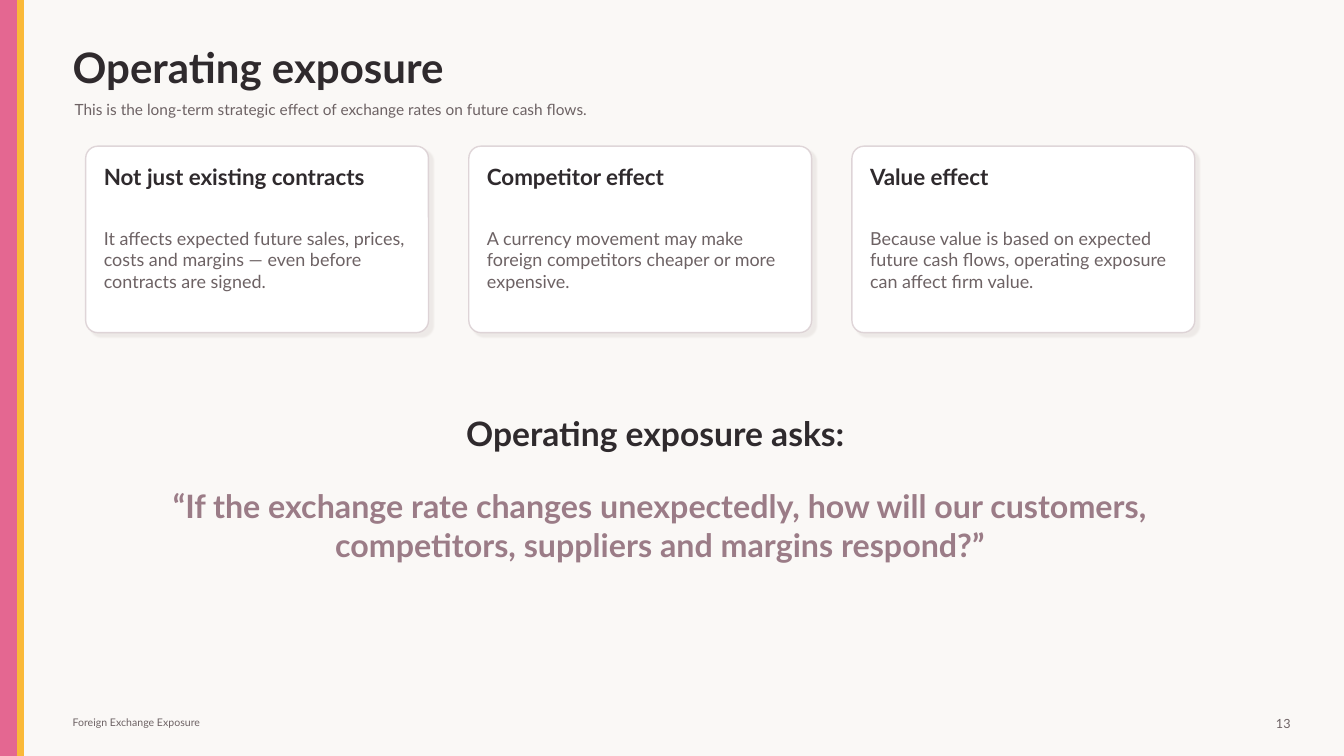
import pptx
import pptx.util
import pptx.dml.color
import pptx.enum.shapes
import pptx.enum.text
import pptx.oxml
import pptx.oxml.ns
import lxml.etree

Inches = pptx.util.Inches
RGBColor = pptx.dml.color.RGBColor
SHAPE = pptx.enum.shapes.MSO_SHAPE
ALIGN = pptx.enum.text.PP_ALIGN

PAPER = RGBColor(0xFA, 0xF8, 0xF6)
PINK = RGBColor(0xE4, 0x67, 0x91)
AMBER = RGBColor(0xFA, 0xB9, 0x38)
INK = RGBColor(0x2F, 0x2A, 0x2D)
GREY = RGBColor(0x6D, 0x62, 0x64)
MAUVE = RGBColor(0x9B, 0x7C, 0x87)
WHITE = RGBColor(0xFF, 0xFF, 0xFF)
BORDER = RGBColor(0xD8, 0xCC, 0xD0)
SHADOW = RGBColor(0xB8, 0xAD, 0xA8)

deck = pptx.Presentation()
deck.slide_width = Inches(13.33)
deck.slide_height = Inches(7.5)
page = deck.slides.add_slide(deck.slide_layouts[5])
page.background.fill.solid()
page.background.fill.fore_color.rgb = PAPER


def write(box, text, size, colour, bold=False, align=ALIGN.LEFT):
    frame = box.text_frame
    frame.word_wrap = True
    frame.auto_size = pptx.enum.text.MSO_AUTO_SIZE.NONE
    frame.vertical_anchor = pptx.enum.text.MSO_ANCHOR.MIDDLE
    frame.margin_left = frame.margin_top = frame.margin_right = frame.margin_bottom = 0
    para = frame.paragraphs[0]
    para.text = text
    para.alignment = align
    para.font.name = "Lato"
    para.font.size = pptx.util.Pt(size)
    para.font.bold = bold
    para.font.color.rgb = colour


def add_panel(kind, left, top, width, height, fill, line):
    panel = page.shapes.add_shape(kind, Inches(left), Inches(top), Inches(width), Inches(height))
    panel.shadow.inherit = False
    panel.fill.solid()
    panel.fill.fore_color.rgb = fill
    panel.line.color.rgb = line
    panel.line.width = pptx.util.Pt(1)
    return panel


# Colour bands on the left edge
for left, width, colour in [(0, 0.18, PINK), (0.18, 0.05, AMBER)]:
    add_panel(SHAPE.RECTANGLE, left, 0, width, 7.5, colour, colour)

# Title
title = page.shapes.title
title.left, title.top = Inches(0.72), Inches(0.42)
title.width, title.height = Inches(11.9), Inches(0.48)
write(title, "Operating exposure", 30, INK, True)

# Cards: outline with a soft shadow, then heading and body text
labels = []
cards = [
    ("Not just existing contracts",
     "It affects expected future sales, prices, costs and margins — even before contracts are signed."),
    ("Competitor effect",
     "A currency movement may make foreign competitors cheaper or more expensive."),
    ("Value effect",
     "Because value is based on expected future cash flows, operating exposure can affect firm value."),
]
for index, (heading, body) in enumerate(cards):
    left = 0.85 + 3.8 * index
    card = add_panel(SHAPE.ROUNDED_RECTANGLE, left, 1.45, 3.4, 1.85, WHITE, BORDER)
    card.adjustments[0] = 0.065
    line_colour = card.line._ln.find(".//" + pptx.oxml.ns.qn("a:srgbClr"))
    lxml.etree.SubElement(line_colour, pptx.oxml.ns.qn("a:alpha"), val="80000")
    effects = card.element.spPr.find(pptx.oxml.ns.qn("a:effectLst"))
    effects.append(pptx.oxml.parse_xml(
        f'<a:outerShdw {pptx.oxml.ns.nsdecls("a")} blurRad="12700" dist="50800" dir="2700000" '
        f'algn="tl" rotWithShape="0"><a:srgbClr val="{SHADOW}"><a:alpha val="18000"/>'
        '</a:srgbClr></a:outerShdw>'))
    labels += [
        (left + 0.18, 1.61, 3.04, 0.28, heading, 16, INK, True, ALIGN.LEFT),
        (left + 0.18, 2, 3.04, 1.15, body, 12.8, GREY, False, ALIGN.LEFT),
    ]

# Subtitle, closing question and footer
labels += [
    (0.74, 0.94, 11.4, 0.28,
     "This is the long-term strategic effect of exchange rates on future cash flows.",
     11, GREY, False, ALIGN.LEFT),
    (1, 4.1, 11, 0.4, "Operating exposure asks:", 24, INK, True, ALIGN.CENTER),
    (1.15, 4.85, 10.8, 0.72,
     "“If the exchange rate changes unexpectedly, how will our customers, "
     "competitors, suppliers and margins respond?”",
     23, MAUVE, True, ALIGN.CENTER),
    (0.72, 7.08, 3.5, 0.18, "Foreign Exchange Exposure", 7.5, GREY, False, ALIGN.LEFT),
    (12.45, 7.05, 0.35, 0.25, "13", 9, GREY, False, ALIGN.RIGHT),
]
for left, top, width, height, text, size, colour, bold, align in labels:
    box = page.shapes.add_textbox(Inches(left), Inches(top), Inches(width), Inches(height))
    write(box, text, size, colour, bold, align)

deck.save("out.pptx")
